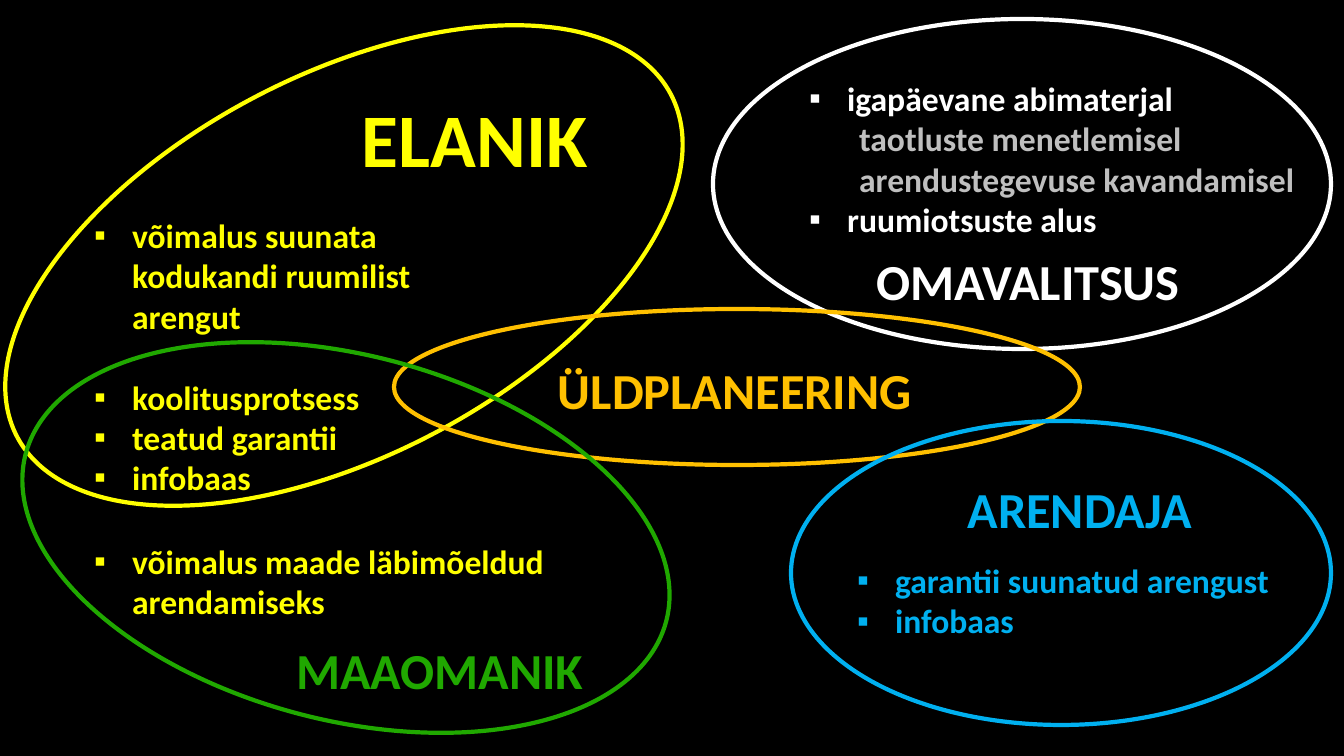
from lxml import etree
from pptx import Presentation
from pptx.dml.color import RGBColor
from pptx.enum.shapes import MSO_SHAPE
from pptx.enum.text import MSO_ANCHOR, MSO_AUTO_SIZE, PP_ALIGN
from pptx.oxml.ns import qn
from pptx.util import Pt

OVAL = MSO_SHAPE.OVAL
TOP = MSO_ANCHOR.TOP
NO_FIT = MSO_AUTO_SIZE.NONE
CENTER, LEFT = PP_ALIGN.CENTER, PP_ALIGN.LEFT

BLACK = RGBColor(0x00, 0x00, 0x00)
WHITE = RGBColor(0xFF, 0xFF, 0xFF)
GRAY = RGBColor(0xBF, 0xBF, 0xBF)
YELLOW = RGBColor(0xFF, 0xFF, 0x00)
ORANGE = RGBColor(0xFF, 0xC0, 0x00)
GREEN = RGBColor(0x20, 0xA8, 0x00)
BLUE = RGBColor(0x00, 0xB0, 0xF0)

FONT = "Calibri"
EMU_PER_PX = 914400 / 100.8
BULLET_INDENT, SUBITEM_INDENT = 38, 50
LIST_SIZE = 24
GROUP_GAP = 29  # points between two groups in a list

# Content: boxes are (left, top, width, height) in px
TITLE = ("ÜLDPLANEERING", (525, 354, 420, 72), 36, ORANGE)
HEADINGS = [
    ("OMAVALITSUS", (805, 245, 446, 72), 36, WHITE),
    ("ELANIK", (252, 87, 446, 102), 54, YELLOW),
    ("MAAOMANIK", (217, 634, 446, 72), 36, GREEN),
    ("ARENDAJA", (857, 473, 446, 72), 36, BLUE),
]
ELLIPSES = [  # box, rotation, colour
    ((713, 19, 618, 330), 0, WHITE),
    ((-25, 75, 738, 381), 332.4, YELLOW),
    ((394, 309, 686, 156), 0, ORANGE),
    ((15, 355, 662, 365), 14.6, GREEN),
    ((791, 421, 540, 304), 0, BLUE),
]
LISTS = [  # box, colour, groups of (level, text)
    ((799, 73, 522, 173), WHITE, [[
        (0, "igapäevane abimaterjal"),
        (1, "taotluste menetlemisel"),
        (1, "arendustegevuse kavandamisel"),
        (0, "ruumiotsuste alus")]]),
    ((84, 210, 407, 336), YELLOW, [
        [(0, "võimalus suunata kodukandi ruumilist arengut")],
        [(0, "koolitusprotsess"), (0, "teatud garantii"), (0, "infobaas")]]),
    ((84, 536, 522, 92), YELLOW, [
        [(0, "võimalus maade läbimõeldud arendamiseks")]]),
    ((847, 555, 490, 132), BLUE, [
        [(0, "garantii suunatud arengust"), (0, "infobaas")]]),
]


def px(length):
    return round(length * EMU_PER_PX)


def place(shape, box):
    shape.left, shape.top, shape.width, shape.height = map(px, box)


def prepare_text(shape):
    frame = shape.text_frame
    frame.word_wrap = True
    frame.auto_size = NO_FIT
    frame.vertical_anchor = TOP
    return frame


def style(paragraph, size, color, alignment):
    paragraph.alignment = alignment
    paragraph.line_spacing = 1.0
    font = paragraph.font
    font.name, font.size, font.bold = FONT, Pt(size), True
    font.color.rgb = color


def write_heading(shape, text, box, size, color):
    place(shape, box)
    paragraph = prepare_text(shape).paragraphs[0]
    paragraph.text = text
    style(paragraph, size, color, CENTER)


def set_bullet(paragraph, level):
    properties = paragraph._p.get_or_add_pPr()
    if level:
        properties.set("marL", str(px(SUBITEM_INDENT)))
        properties.set("indent", "0")
        etree.SubElement(properties, qn("a:buNone"))
    else:
        properties.set("marL", str(px(BULLET_INDENT)))
        properties.set("indent", str(-px(BULLET_INDENT)))
        etree.SubElement(properties, qn("a:buFont"), typeface="Arial")
        etree.SubElement(properties, qn("a:buChar"), char="▪")


def write_list(shape, box, color, groups):
    place(shape, box)
    frame = prepare_text(shape)
    paragraph = frame.paragraphs[0]
    for group_number, group in enumerate(groups):
        for item_number, (level, text) in enumerate(group):
            if group_number or item_number:
                paragraph = frame.add_paragraph()
            paragraph.text = text
            paragraph.level = level
            set_bullet(paragraph, level)
            starts_group = group_number and not item_number
            paragraph.space_before = Pt(GROUP_GAP if starts_group else 0)
            style(paragraph, LIST_SIZE, GRAY if level else color, LEFT)


presentation = Presentation()
presentation.slide_width, presentation.slide_height = px(1344), px(756)
# The comparison layout offers a title and four bodies
slide = presentation.slides.add_slide(presentation.slide_layouts[4])
slide.background.fill.solid()
slide.background.fill.fore_color.rgb = BLACK

# Title and lists
write_heading(slide.shapes.title, *TITLE)
bodies = list(slide.placeholders)[1:]
for body, content in zip(bodies, LISTS):
    write_list(body, *content)

# Ellipses
for box, rotation, color in ELLIPSES:
    ellipse = slide.shapes.add_shape(OVAL, *map(px, box))
    ellipse.rotation = rotation
    ellipse.shadow.inherit = False
    ellipse.fill.background()
    ellipse.line.color.rgb = color
    ellipse.line.width = Pt(3)

# Headings of the parties
for text, box, size, color in HEADINGS:
    heading = slide.shapes.add_textbox(*map(px, box))
    write_heading(heading, text, box, size, color)

presentation.save("out.pptx")
